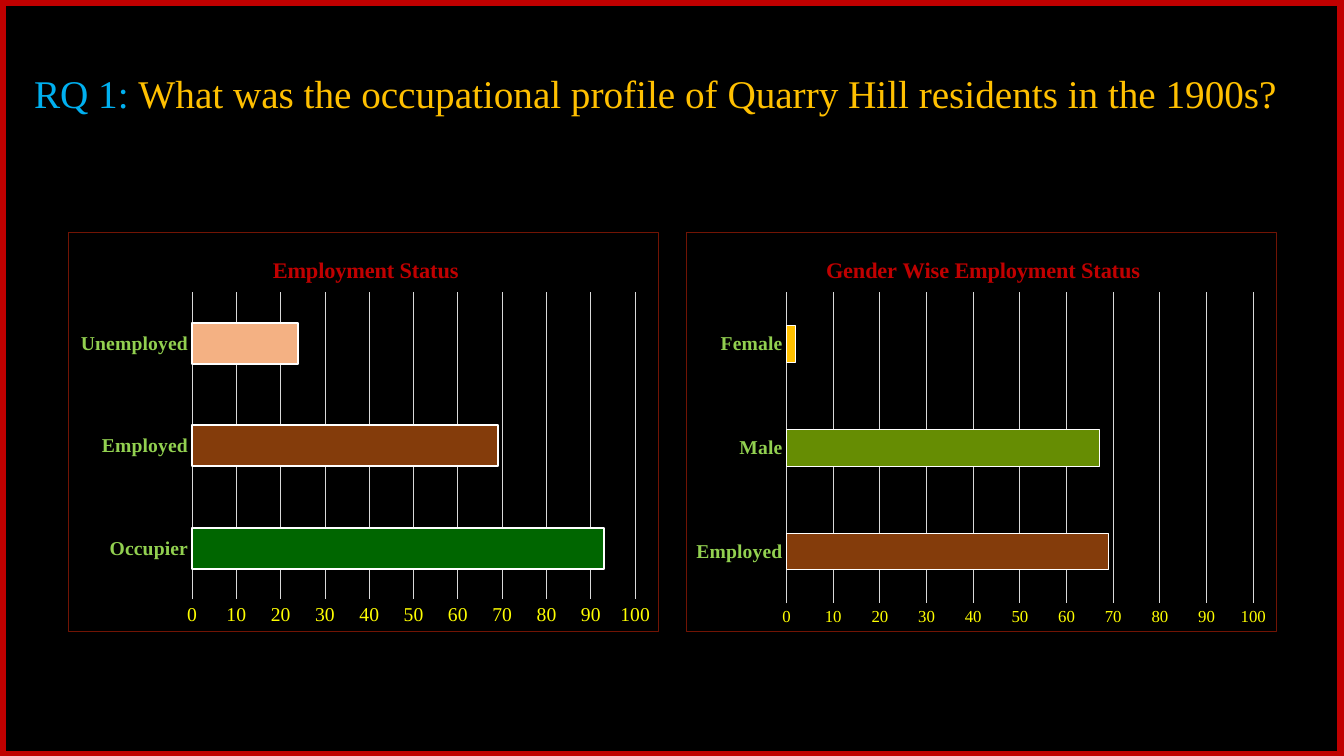
from lxml.etree import SubElement
from pptx import Presentation
from pptx.chart.data import CategoryChartData
from pptx.dml.color import RGBColor
from pptx.enum.chart import XL_CHART_TYPE, XL_TICK_MARK
from pptx.enum.shapes import MSO_SHAPE
from pptx.enum.text import MSO_ANCHOR, PP_ALIGN
from pptx.oxml import parse_xml
from pptx.oxml.ns import nsdecls, qn
from pptx.util import Inches, Pt

SERIF = "Times New Roman"


def color(value):
    return RGBColor.from_string(value)


def style_font(font, size, value, bold=False, name=SERIF):
    font.name = name
    font.size = Pt(size)
    font.bold = bold
    font.color.rgb = color(value)


def style_line(line, value, width):
    line.color.rgb = color(value)
    line.width = Pt(width)


def add_frame(page):
    frame = page.shapes.add_shape(
        MSO_SHAPE.RECTANGLE, Inches(0.02), Inches(0.02), Inches(13.28), Inches(7.47))
    frame.shadow.inherit = False
    frame.fill.background()
    style_line(frame.line, "C00000", 6)


def add_question(page, spans):
    box = page.shapes.add_textbox(Inches(0.11), Inches(0.24), Inches(13.06), Inches(1.13))
    box.text_frame.word_wrap = True
    box.text_frame.vertical_anchor = MSO_ANCHOR.MIDDLE
    para = box.text_frame.paragraphs[0]
    para.alignment = PP_ALIGN.JUSTIFY
    para.line_spacing = 1.5
    para._p.get_or_add_pPr().set("marL", str(Inches(0.13)))
    for text, value in spans:
        span = para.add_run()
        span.text = text
        style_font(span.font, 28, value)


def place(parent, position, **fractions):
    """Set a manual layout, in fractions of the chart's size."""
    for old in parent.findall(qn("c:layout")):
        parent.remove(old)
    layout = parse_xml(f"<c:layout {nsdecls('c')}/>")
    parent.insert(position, layout)
    manual = SubElement(layout, qn("c:manualLayout"))
    if "w" in fractions:
        SubElement(manual, qn("c:layoutTarget")).set("val", "inner")
    for mode in ("xMode", "yMode"):
        SubElement(manual, qn(f"c:{mode}")).set("val", "edge")
    for key, value in fractions.items():
        SubElement(manual, qn(f"c:{key}")).set("val", str(value))


def add_border(chart, value, width):
    chart._chartSpace.find(qn("c:chart")).addnext(parse_xml(
        f'<c:spPr {nsdecls("c", "a")}><a:noFill/><a:ln w="{Pt(width)}"><a:solidFill>'
        f'<a:srgbClr val="{value}"/></a:solidFill></a:ln></c:spPr>'))


def add_bar_chart(page, left, title, bars, gap, outline, scale_size, title_x, plot):
    data = CategoryChartData()
    data.categories = [name for name, _, _ in bars]
    data.add_series("Series 1", [count for _, count, _ in bars])
    chart = page.shapes.add_chart(
        XL_CHART_TYPE.BAR_CLUSTERED, Inches(left), Inches(2.3),
        Inches(5.87), Inches(3.97), data).chart
    style_font(chart.font, 10, "000000", name="Calibri")
    add_border(chart, "721404", 0.75)
    chart.has_legend = False

    # Title
    chart.has_title = True
    span = chart.chart_title.text_frame.paragraphs[0].add_run()
    span.text = title
    style_font(span.font, 16, "C00000", bold=True)
    chart.chart_title.include_in_layout = False
    place(chart.chart_title._element, 1, x=title_x, y=0.05)

    # Axes
    names, scale = chart.category_axis, chart.value_axis
    for axis in (names, scale):
        axis.major_tick_mark = XL_TICK_MARK.NONE
        axis.minor_tick_mark = XL_TICK_MARK.NONE
    style_font(names.tick_labels.font, 14, "92D050", bold=True)
    style_line(names.format.line, "D9D9D9", 0.75)
    style_font(scale.tick_labels.font, scale_size, "FFFF00")
    scale.format.line.fill.background()
    scale.minimum_scale, scale.maximum_scale, scale.major_unit = 0, 100, 10
    scale.has_major_gridlines = True
    style_line(scale.major_gridlines.format.line, "D9D9D9", 0.75)

    # Bars
    bar_plot = chart.plots[0]
    bar_plot.gap_width = gap
    bar_plot.vary_by_categories = False
    for index, (_, _, value) in enumerate(bars):
        bar = bar_plot.series[0].points[index].format
        bar.fill.solid()
        bar.fill.fore_color.rgb = color(value)
        style_line(bar.line, "FFFFFF", outline)
    place(chart._chartSpace.find(qn("c:chart")).find(qn("c:plotArea")), 0, **plot)


def main():
    deck = Presentation()
    deck.slide_width, deck.slide_height = Inches(13.33), Inches(7.5)
    page = deck.slides.add_slide(deck.slide_layouts[6])
    page.background.fill.solid()
    page.background.fill.fore_color.rgb = color("000000")
    add_frame(page)

    # Charts
    add_bar_chart(
        page, 0.67, "Employment Status",
        [("Occupier", 93, "006600"), ("Employed", 69, "843C0B"),
         ("Unemployed", 24, "F4B183")],
        gap=150, outline=1.5, scale_size=14, title_x=0.34,
        plot={"x": 0.21, "y": 0.15, "w": 0.75, "h": 0.77})
    add_bar_chart(
        page, 6.8, "Gender Wise Employment Status",
        [("Employed", 69, "843C0B"), ("Male", 67, "668D03"), ("Female", 2, "FFC000")],
        gap=182, outline=0.75, scale_size=12, title_x=0.23,
        plot={"x": 0.17, "y": 0.15, "w": 0.79, "h": 0.78})

    # Research question
    add_question(page, [
        ("RQ 1: ", "00B0F0"),
        ("What was the occupational profile of Quarry Hill residents in the 1900s?",
         "FFC000")])
    deck.save("out.pptx")


if __name__ == "__main__":
    main()
